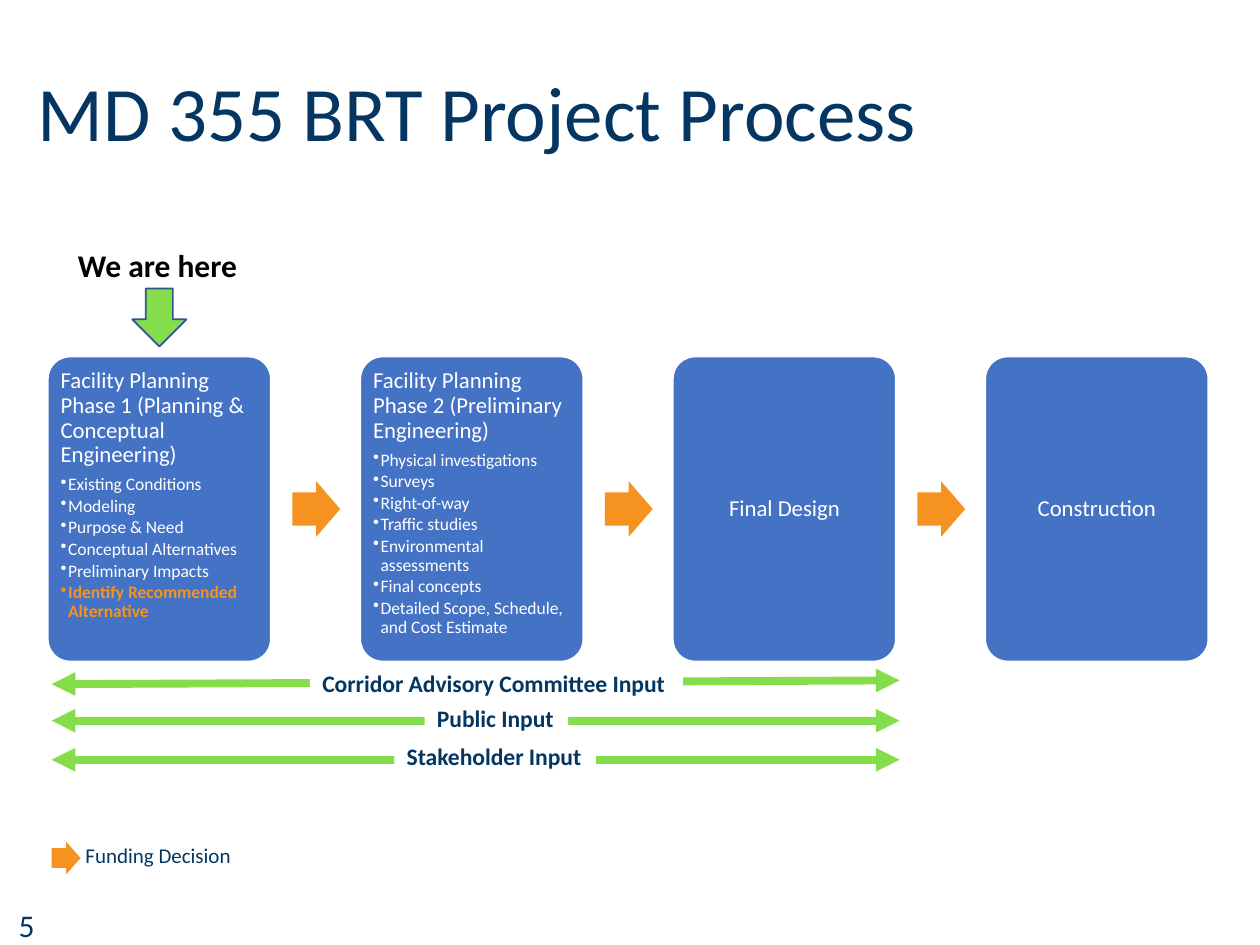
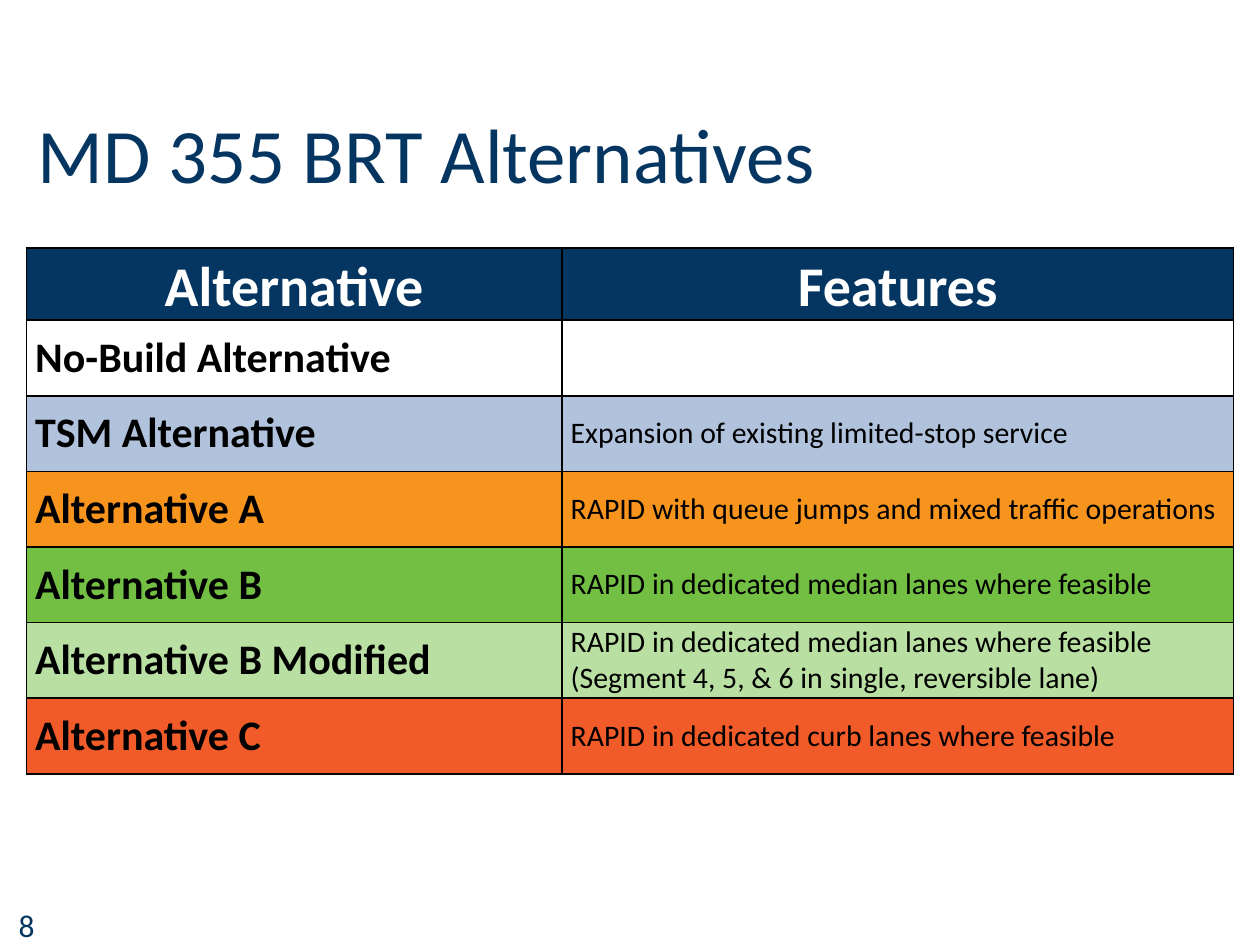
from dataclasses import dataclass

from lxml import etree
from pptx import Presentation
from pptx import util as u
from pptx.dml.color import RGBColor
from pptx.enum import shapes, text
from pptx.oxml.ns import qn

SCALE = u.Inches(1) // 100


@dataclass(frozen=True)
class Theme:
    """Colours and type sizes shared by the slides."""
    font: str = "Calibri"
    navy: str = "043661"
    blue: str = "4472C4"
    outline: str = "325491"
    orange: str = "F69320"
    lime: str = "85DD4B"
    white: str = "FFFFFF"
    black: str = "000000"
    title: int = 44
    table_head: int = 32
    table_name: int = 24
    table_feature: int = 17
    callout: int = 18
    step: int = 13
    bullet: int = 10
    legend: int = 12
    input: float = 13.5


STEPS = [
    ("Facility Planning Phase 1 (Planning & Conceptual Engineering)",
     ["Existing Conditions", "Modeling", "Purpose & Need", "Conceptual Alternatives",
      "Preliminary Impacts", "Identify Recommended Alternative"]),
    ("Facility Planning Phase 2 (Preliminary Engineering)",
     ["Physical investigations", "Surveys", "Right-of-way", "Traffic studies",
      "Environmental assessments", "Final concepts",
      "Detailed Scope, Schedule, and Cost Estimate"]),
    ("Final Design", []),
    ("Construction", []),
]
CURRENT_TASK = "Identify Recommended Alternative"

INPUTS = [
    ("Corridor Advisory Committee Input", 246, 526, 296, 543, 540),
    ("Public Input", 337, 554, 114, 572, 572),
    ("Stakeholder Input", 313, 584, 160, 603, 603),
]

ALTERNATIVES = [
    ("No-Build Alternative", "", "FFFFFF"),
    ("TSM Alternative", "Expansion of existing limited-stop service", "B1C2DD"),
    ("Alternative A", "RAPID with queue jumps and mixed traffic operations", "F7941E"),
    ("Alternative B", "RAPID in dedicated median lanes where feasible", "72BF44"),
    ("Alternative B Modified",
     "RAPID in dedicated median lanes where feasible "
     "(Segment 4, 5, & 6 in single, reversible lane)", "B9DFA2"),
    ("Alternative C", "RAPID in dedicated curb lanes where feasible", "F15A29"),
]


def px(*lengths):
    """Turn px lengths into EMU."""
    return [length * SCALE for length in lengths]


class Deck:
    """Holds the theme and the current slide, and draws elements on it."""

    def __init__(self, theme):
        """Start a presentation of 1000 by 750 px."""
        self.theme = theme
        self.presentation = Presentation()
        self.presentation.slide_width, self.presentation.slide_height = px(1000, 750)
        self.slide = None

    def add_slide(self, title, number, title_drop=0):
        """Add a slide with its title and page number."""
        layout = self.presentation.slide_layouts[5]
        self.slide = self.presentation.slides.add_slide(layout)
        shape = self.slide.shapes.title
        shape.left, shape.top, shape.width, shape.height = px(20, 20, 800, 145)
        frame = shape.text_frame
        frame.auto_size = text.MSO_AUTO_SIZE.NONE
        frame.vertical_anchor = text.MSO_ANCHOR.MIDDLE
        frame.margin_top, = px(5 + 2 * title_drop)
        frame.text = title
        self.style(frame.paragraphs[0], self.theme.title, self.theme.navy, spacing=0.9)
        self.label(str(number), 5, 714, 225, 36, self.theme.callout, self.theme.navy, wrap=True)

    def style(self, paragraph, size, color, bold=False,
              align=text.PP_ALIGN.LEFT, spacing=None, after=None):
        """Format one paragraph."""
        paragraph.alignment = align
        if spacing:
            paragraph.line_spacing = spacing
        if after is not None:
            paragraph.space_after = u.Pt(after)
        font = paragraph.font
        font.name, font.size, font.bold = self.theme.font, u.Pt(size), bold
        font.color.rgb = RGBColor.from_string(color)

    def shape(self, kind, left, top, width, height, fill, line=None, adjust=()):
        """Add a filled preset shape."""
        shape = self.slide.shapes.add_shape(kind, *px(left, top, width, height))
        shape.shadow.inherit = False
        shape.fill.solid()
        shape.fill.fore_color.rgb = RGBColor.from_string(fill)
        if line:
            shape.line.color.rgb = RGBColor.from_string(line)
            shape.line.width = u.Pt(1)
        else:
            shape.line.fill.background()
        for index, value in enumerate(adjust):
            shape.adjustments[index] = value
        return shape

    def label(self, words, left, top, width, height, size, color,
              bold=False, fill=None, wrap=False):
        """Add a one-line text box, with a fill if asked."""
        shape = self.slide.shapes.add_textbox(*px(left, top, width, height))
        if fill:
            shape.fill.solid()
            shape.fill.fore_color.rgb = RGBColor.from_string(fill)
        frame = shape.text_frame
        frame.word_wrap = wrap
        frame.text = words
        self.style(frame.paragraphs[0], size, color, bold)

    def funding_arrow(self, left, top, width, height):
        """Add the arrow that marks a funding decision."""
        self.shape(shapes.MSO_SHAPE.RIGHT_ARROW, left, top, width, height,
                   self.theme.orange, adjust=(0.6, 0.5))

    def step(self, heading, tasks, left, top, width, height):
        """Add a process step with its tasks as bullets."""
        theme = self.theme
        shape = self.shape(shapes.MSO_SHAPE.ROUNDED_RECTANGLE, left, top, width, height,
                           theme.blue, theme.white, (0.1,))
        frame = shape.text_frame
        frame.word_wrap = True
        frame.margin_left, frame.margin_top, frame.margin_right, frame.margin_bottom = px(5, 5, 5, 5)
        frame.vertical_anchor = text.MSO_ANCHOR.TOP if tasks else text.MSO_ANCHOR.MIDDLE
        frame.text = heading
        align = text.PP_ALIGN.LEFT if tasks else text.PP_ALIGN.CENTER
        self.style(frame.paragraphs[0], theme.step, theme.white, align=align,
                   spacing=0.9, after=4.5)
        for task in tasks:
            paragraph = frame.add_paragraph()
            paragraph.text = task
            self.bullet(paragraph, 6)
            current = task == CURRENT_TASK
            self.style(paragraph, theme.bullet, theme.orange if current else theme.white,
                       current, spacing=0.9, after=1.5)

    def bullet(self, paragraph, indent):
        """Give a paragraph a hanging bullet."""
        properties = paragraph._p.get_or_add_pPr()
        hang, = px(indent)
        properties.set("marL", str(hang))
        properties.set("indent", str(-hang))
        etree.SubElement(properties, qn("a:buChar")).set("char", "•")

    def double_arrow(self, left, start, right, end):
        """Add a thick line with an arrowhead at both ends."""
        connector = self.slide.shapes.add_connector(
            shapes.MSO_CONNECTOR.STRAIGHT, *px(left, start, right, end))
        connector.line.color.rgb = RGBColor.from_string(self.theme.lime)
        connector.line.width = u.Pt(4.5)
        line = connector.line._get_or_add_ln()
        for tag in ("a:headEnd", "a:tailEnd"):
            etree.SubElement(line, qn(tag)).set("type", "triangle")
        etree.SubElement(connector._element.spPr, qn("a:effectLst"))

    def table(self, left, top, columns, heights):
        """Add an unbanded table with the given column widths and row heights."""
        frame = self.slide.shapes.add_table(
            len(heights), len(columns), *px(left, top, sum(columns), sum(heights)))
        table = frame.table
        table.horz_banding = False
        for column, width in zip(table.columns, columns):
            column.width, = px(width)
        for row, height in zip(table.rows, heights):
            row.height, = px(height)
        return table

    def cell(self, cell, words, size, color, fill, **style):
        """Fill, border and format one table cell."""
        properties = cell._tc.get_or_add_tcPr()
        for side in "LRTB":
            line = etree.SubElement(properties, qn(f"a:ln{side}"), w=str(u.Pt(1)))
            solid = etree.SubElement(line, qn("a:solidFill"))
            etree.SubElement(solid, qn("a:srgbClr"), val=self.theme.black)
        cell.fill.solid()
        cell.fill.fore_color.rgb = RGBColor.from_string(fill)
        cell.margin_left, cell.margin_right, cell.margin_top, cell.margin_bottom = px(7, 7, 0, 0)
        cell.vertical_anchor = text.MSO_ANCHOR.MIDDLE
        cell.text = words
        self.style(cell.text_frame.paragraphs[0], size, color, **style)


def draw_process(deck):
    """Draw the project process slide."""
    theme = deck.theme
    deck.add_slide("MD 355 BRT Project Process", 5)
    first, pitch = 38, 248
    for index, (heading, tasks) in enumerate(STEPS):
        left = first + index * pitch
        deck.step(heading, tasks, left, 283, 177, 242)
        if index < len(STEPS) - 1:
            deck.funding_arrow(left + 194, 382, 38, 44)
    deck.shape(shapes.MSO_SHAPE.DOWN_ARROW, 105, 229, 43, 46, theme.lime, theme.outline)
    deck.label("We are here", 52, 190, 148, 40, theme.callout, theme.black, bold=True)
    deck.funding_arrow(41, 668, 23, 26)
    deck.label("Funding Decision", 58, 664, 137, 30, theme.legend, theme.navy)
    for words, left, top, width, start, end in INPUTS:
        deck.double_arrow(41, start, 714, end)
        deck.label(words, left, top, width, 33, theme.input, theme.navy,
                   bold=True, fill=theme.white)


def draw_alternatives(deck):
    """Draw the table of alternatives."""
    theme = deck.theme
    deck.add_slide("MD 355 BRT Alternatives", 8, title_drop=33)
    table = deck.table(21, 197, (425, 533), [42] + [60] * len(ALTERNATIVES))
    for column, words in enumerate(("Alternative", "Features")):
        deck.cell(table.cell(0, column), words, theme.table_head, theme.white, theme.navy,
                  bold=True, align=text.PP_ALIGN.CENTER, spacing=1.07)
    for row, (name, feature, fill) in enumerate(ALTERNATIVES, 1):
        deck.cell(table.cell(row, 0), name, theme.table_name, theme.black, fill, bold=True)
        deck.cell(table.cell(row, 1), feature, theme.table_feature, theme.black, fill)


def main():
    """Build and save the presentation."""
    deck = Deck(Theme())
    draw_process(deck)
    draw_alternatives(deck)
    deck.presentation.save("out.pptx")


if __name__ == "__main__":
    main()
